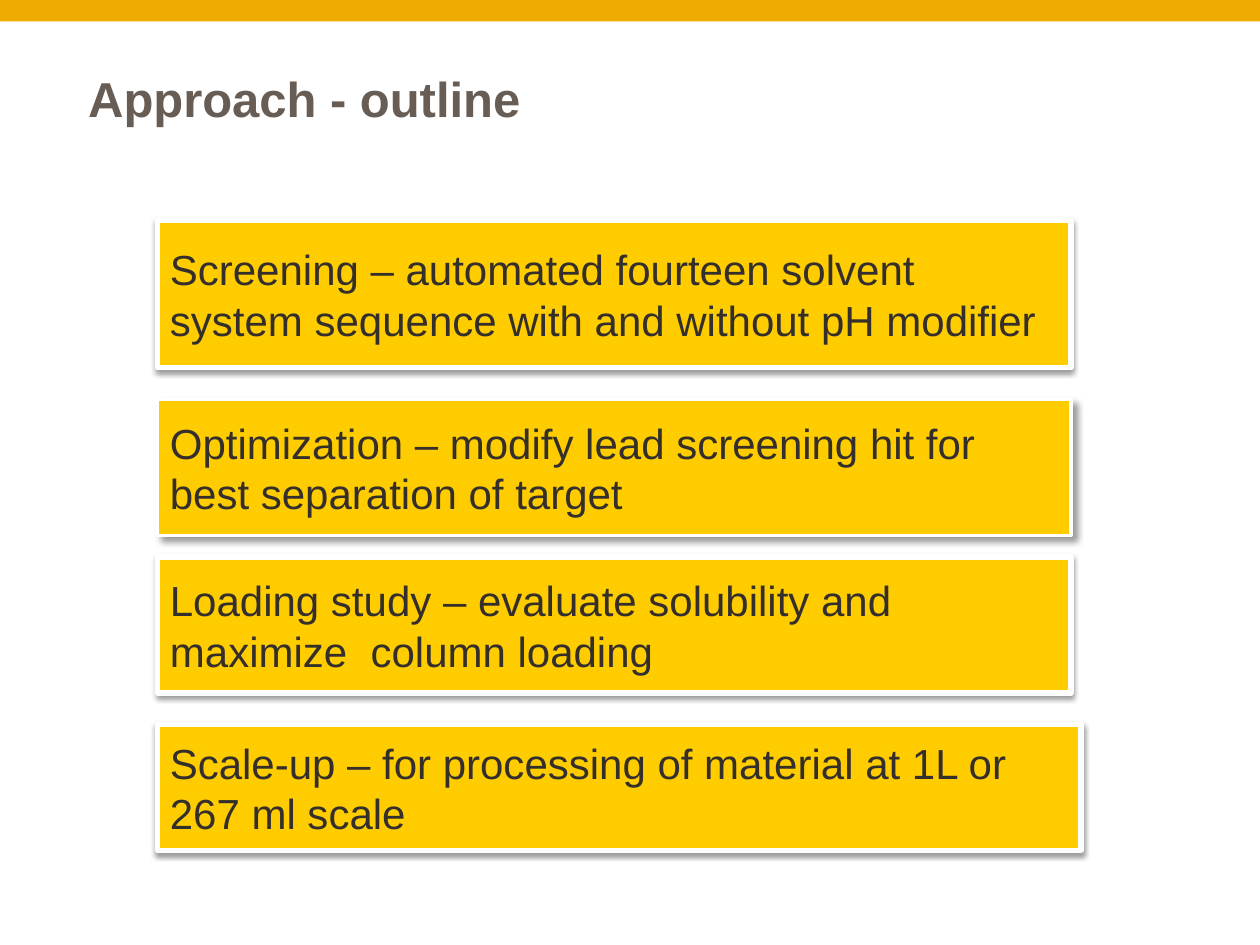
from dataclasses import dataclass

from lxml import etree
from pptx import Presentation
from pptx.dml.color import RGBColor
from pptx.enum.shapes import MSO_SHAPE
from pptx.enum.text import MSO_ANCHOR, PP_ALIGN
from pptx.oxml.ns import qn
from pptx.util import Inches, Pt

RECT = MSO_SHAPE.RECTANGLE
MIDDLE = MSO_ANCHOR.MIDDLE
LEFT = PP_ALIGN.LEFT
TITLE_ONLY = 5
FONT = "Arial"
COLORS = {
    "band": "F0AB00",
    "step": "FFCC00",
    "border": "FFFFFF",
    "title": "685D55",
    "text": "342F2B",
    "shadow": "000000",
}


@dataclass(frozen=True)
class Shadow:
    opacity: int
    blur: float
    distance: float
    angle: int


SOFT = Shadow(opacity=38, blur=3.1, distance=1.6, angle=90)
DIAGONAL = Shadow(opacity=40, blur=4, distance=3, angle=45)


@dataclass(frozen=True)
class Step:
    text: str
    top: float
    height: float
    width: float = 7.25
    border: float = 3
    shadow: Shadow = SOFT


STEPS = [
    Step("Screening – automated fourteen solvent system sequence "
         "with and without pH modifier", 1.75, 1.17),
    Step("Optimization – modify lead screening hit for best separation of target",
         3.17, 1.08, border=2, shadow=DIAGONAL),
    Step("Loading study – evaluate solubility and maximize  column loading",
         4.42, 1.08),
    Step("Scale-up – for processing of material at 1L or 267 ml scale",
         5.75, 1, width=7.33),
]


def rgb(name: str) -> RGBColor:
    return RGBColor.from_string(COLORS[name])


def set_text(sp, text: str, *, size: float, color: str,
             bold: bool = False, margin: float = 0.1) -> None:
    tf = sp.text_frame
    tf.word_wrap = True
    tf.vertical_anchor = MIDDLE
    tf.margin_left = Inches(margin)
    p = tf.paragraphs[0]
    p.alignment = LEFT
    r = p.add_run()
    r.text = text
    r.font.name = FONT
    r.font.size = Pt(size)
    r.font.bold = bold
    r.font.color.rgb = rgb(color)


def add_rect(s, left: float, top: float, width: float, height: float, fill: str):
    sp = s.shapes.add_shape(RECT, Inches(left), Inches(top),
                            Inches(width), Inches(height))
    sp.shadow.inherit = False
    sp.fill.solid()
    sp.fill.fore_color.rgb = rgb(fill)
    sp.line.fill.background()
    return sp


def add_shadow(sp, shadow: Shadow) -> None:
    effects = sp._element.spPr.find(qn("a:effectLst"))
    outer = etree.SubElement(
        effects, qn("a:outerShdw"),
        blurRad=str(int(Pt(shadow.blur))), dist=str(int(Pt(shadow.distance))),
        dir=str(shadow.angle * 60000), algn="tl", rotWithShape="0")
    color = etree.SubElement(outer, qn("a:srgbClr"), val=COLORS["shadow"])
    etree.SubElement(color, qn("a:alpha"), val=str(shadow.opacity * 1000))


def add_step(s, step: Step) -> None:
    sp = add_rect(s, 1.25, step.top, step.width, step.height, "step")
    sp.line.color.rgb = rgb("border")
    sp.line.width = Pt(step.border)
    add_shadow(sp, step.shadow)
    set_text(sp, step.text, size=24, color="text")


def main() -> None:
    prs = Presentation()
    prs.slide_width, prs.slide_height = Inches(10), Inches(7.5)
    s = prs.slides.add_slide(prs.slide_layouts[TITLE_ONLY])
    add_rect(s, 0, 0, 10, 0.17, "band")

    title = s.shapes.title
    title.left, title.top = Inches(0.5), Inches(0.3)
    title.width, title.height = Inches(9), Inches(0.95)
    set_text(title, "Approach - outline", size=28, color="title",
             bold=True, margin=0.2)

    for step in STEPS:
        add_step(s, step)
    prs.save("out.pptx")


if __name__ == "__main__":
    main()
